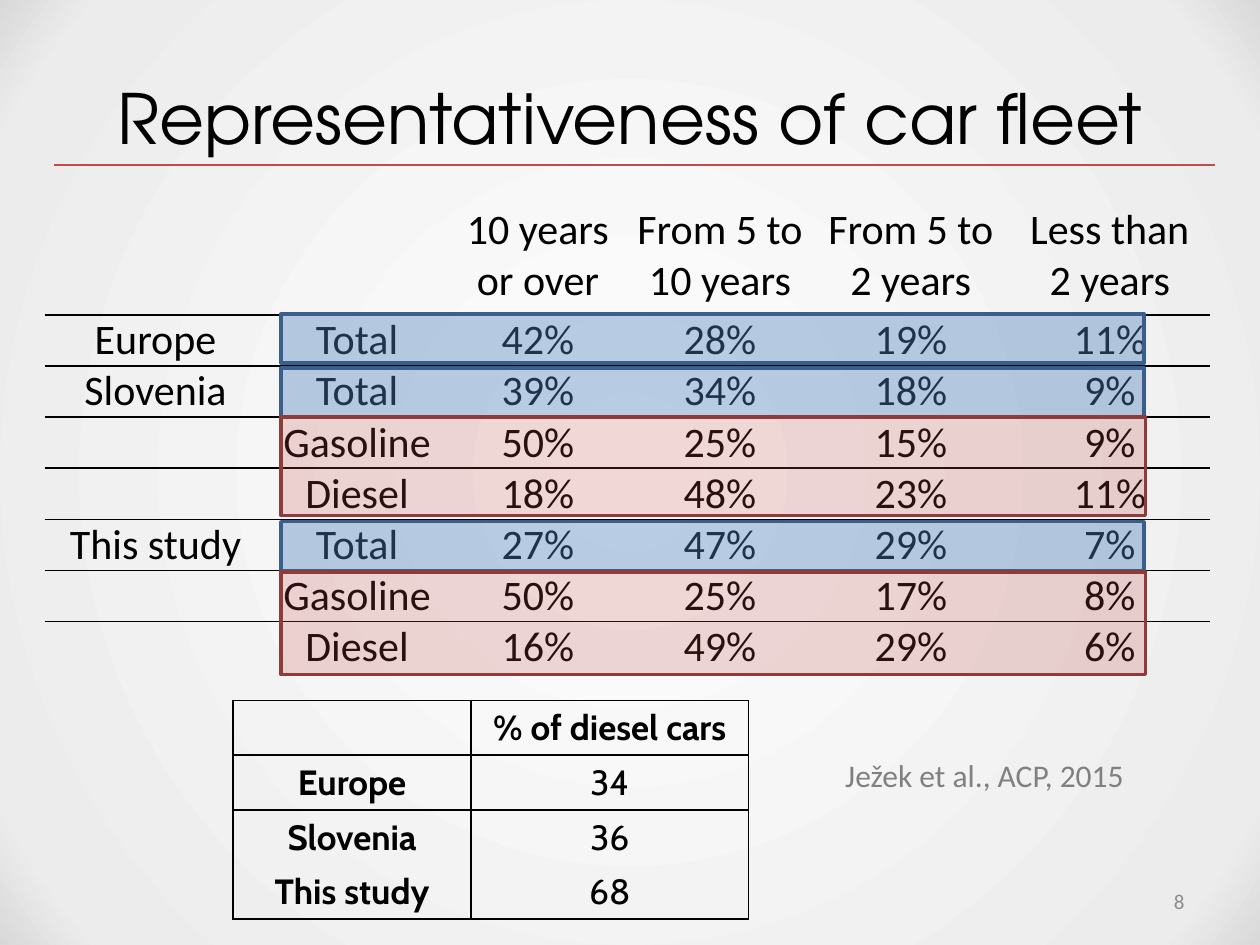
import pptx
import pptx.dml.color
import pptx.enum.shapes
import pptx.enum.text
import pptx.oxml
import pptx.oxml.ns
import pptx.util
from dataclasses import dataclass

Pt = pptx.util.Pt
Align = pptx.enum.text.PP_ALIGN
Anchor = pptx.enum.text.MSO_ANCHOR
qn = pptx.oxml.ns.qn
SPACE = pptx.oxml.ns.nsdecls("a")
PLAIN = "{2D5ABB26-0587-4C30-8999-92F81FD0307C}"  # table style without grid


@dataclass(frozen=True)
class Theme:
    ink: str = "000000"
    gray: str = "808080"
    pale: str = "8C8C8C"
    rule: str = "BF4C48"
    blue: tuple = ("4F81BD", "3A5F8C", 40)  # fill, line, opacity in percent
    red: tuple = ("C0504D", "8E3B39", 22)
    back: tuple = ((0, "FFFFFF"), (90, "ECECEC"), (100, "D9D9D9"))
    head: str = "TeX Gyre Adventor"
    body: str = "Calibri"
    alt: str = "Cabin"
    title: float = 39.6
    large: float = 24
    mid: float = 20
    small: float = 18
    tiny: float = 12


def rgb(code):
    return pptx.dml.color.RGBColor.from_string(code)


def write(frame, text, font, size, color=Theme.ink, bold=False,
          align=Align.CENTER):
    para = frame.paragraphs[0]
    para.alignment = align
    run = para.add_run()
    run.text = text
    run.font.name = font
    run.font.size = Pt(size)
    run.font.bold = bold
    run.font.color.rgb = rgb(color)


def edge(cell, sides, color, width=1):
    props = cell._tc.get_or_add_tcPr()
    for side in "LRTB":  # the order the schema asks for
        if side in sides:
            props.append(pptx.oxml.parse_xml(
                f'<a:ln{side} {SPACE} w="{Pt(width)}"><a:solidFill>'
                f'<a:srgbClr val="{color}"/></a:solidFill></a:ln{side}>'))


class Page:
    def __init__(self, deck, theme):
        self.theme = theme
        self.slide = deck.slides.add_slide(deck.slide_layouts[6])
        self.shapes = self.slide.shapes

    def paint(self):
        self.slide.background.fill.solid()
        old = next(self.slide.element.iter(qn("a:solidFill")))
        stops = "".join(
            f'<a:gs pos="{pos * 1000}"><a:srgbClr val="{code}"/></a:gs>'
            for pos, code in self.theme.back)
        new = pptx.oxml.parse_xml(
            f'<a:gradFill {SPACE} rotWithShape="1"><a:gsLst>{stops}</a:gsLst>'
            '<a:path path="circle"><a:fillToRect l="50000" t="50000" '
            'r="50000" b="50000"/></a:path></a:gradFill>')
        old.getparent().replace(old, new)

    def text(self, box, text, anchor=Anchor.MIDDLE, **form):
        frame = self.shapes.add_textbox(*map(Pt, box)).text_frame
        frame.word_wrap = True
        frame.vertical_anchor = anchor
        write(frame, text, **form)

    def line(self, start, end, color, width):
        line = self.shapes.add_connector(
            pptx.enum.shapes.MSO_CONNECTOR.STRAIGHT, *map(Pt, start + end))
        line.line.color.rgb = rgb(color)
        line.line.width = Pt(width)
        line._element.spPr.append(
            pptx.oxml.parse_xml(f"<a:effectLst {SPACE}/>"))

    def band(self, box, tint):
        fill, edging, alpha = tint
        band = self.shapes.add_shape(
            pptx.enum.shapes.MSO_SHAPE.RECTANGLE, *map(Pt, box))
        band.shadow.inherit = False
        band.fill.solid()
        band.fill.fore_color.rgb = rgb(fill)
        code = next(band._element.spPr.iter(qn("a:srgbClr")))
        code.append(pptx.oxml.parse_xml(
            f'<a:alpha {SPACE} val="{alpha * 1000}"/>'))
        band.line.color.rgb = rgb(edging)
        band.line.width = Pt(2)

    def table(self, spot, cols, rows, data, style):
        """style(row, col) gives border sides, anchor, insets and text form."""
        size = (sum(cols), sum(rows))
        grid = self.shapes.add_table(
            len(rows), len(cols), *map(Pt, spot + size)).table
        grid.first_row = grid.horz_banding = False
        next(grid._tbl.iter(qn("a:tableStyleId"))).text = PLAIN
        for col, width in zip(grid.columns, cols):
            col.width = Pt(width)
        for row, height in zip(grid.rows, rows):
            row.height = Pt(height)
        for r, line in enumerate(data):
            for c, text in enumerate(line):
                cell = grid.cell(r, c)
                sides, anchor, (side, end), form = style(r, c)
                edge(cell, sides, self.theme.ink)
                cell.fill.background()
                cell.vertical_anchor = anchor
                cell.margin_left = cell.margin_right = Pt(side)
                cell.margin_top = cell.margin_bottom = Pt(end)
                if text:
                    write(cell.text_frame, text, **form)


def main():
    deck = pptx.Presentation()
    deck.slide_width, deck.slide_height = Pt(720), Pt(540)
    theme = Theme()
    page = Page(deck, theme)
    page.paint()

    # Title
    page.text((36, 21.6, 648, 90), "Representativeness of car fleet",
              font=theme.head, size=theme.title)

    # Age of the fleet
    ages = [
        ("", "", "10 years or over", "From 5 to 10 years",
         "From 5 to 2 years", "Less than 2 years"),
        ("Europe", "Total", "42%", "28%", "19%", "11%"),
        ("Slovenia", "Total", "39%", "34%", "18%", "9%"),
        ("", "Gasoline", "50%", "25%", "15%", "9%"),
        ("", "Diesel", "18%", "48%", "23%", "11%"),
        ("This study", "Total", "27%", "47%", "29%", "7%"),
        ("", "Gasoline", "50%", "25%", "17%", "8%"),
        ("", "Diesel", "16%", "49%", "29%", "6%"),
    ]
    ruled = {0, 1, 2, 4, 5}

    def age(r, c):
        sides = ("B" if r in ruled else "") + ("T" if r - 1 in ruled else "")
        anchor = Anchor.MIDDLE if r else Anchor.TOP
        return sides, anchor, (5, 0), dict(font=theme.body, size=theme.large)

    page.table((25.5, 116.8), (126.7, 103.7, 103, 105.1, 113, 114.5),
               (63.2,) + (29.2,) * 7, ages, age)

    # Slide number and title rule
    page.text((516, 500.5, 168, 28.8), "8", font=theme.body, size=theme.tiny,
              color=theme.pale, align=Align.RIGHT)
    page.line((31, 94.3), (694.5, 94.3), theme.rule, 0.75)

    # Bands over totals and fuel types
    for top in (179.3, 210.2, 298.1):
        page.band((160.6, top, 493.2, 28.1), theme.blue)
    for top, height in ((238.3, 56.2), (326.9, 58.5)):
        page.band((160.6, top, 494, height), theme.red)

    # Source
    page.text((475.9, 428.4, 181.5, 29), "Ježek et al., ACP, 2015",
              anchor=Anchor.TOP, font=theme.body, size=theme.small,
              color=theme.gray, align=Align.LEFT)

    # Share of diesel cars
    share = [("", "% of diesel cars"), ("Europe", "34"),
             ("Slovenia", "36"), ("This study", "68")]

    def fuel(r, c):
        sides = "LR" + {0: "TB", 1: "T", 3: "B"}.get(r, "")
        form = dict(font=theme.alt, size=theme.mid, bold=r == 0 or c == 0)
        return sides, Anchor.TOP, (7.2, 3.6), form

    page.table((133.2, 400.3), (136, 158.6), (31.2,) * 4, share, fuel)

    deck.save("out.pptx")


if __name__ == "__main__":
    main()
